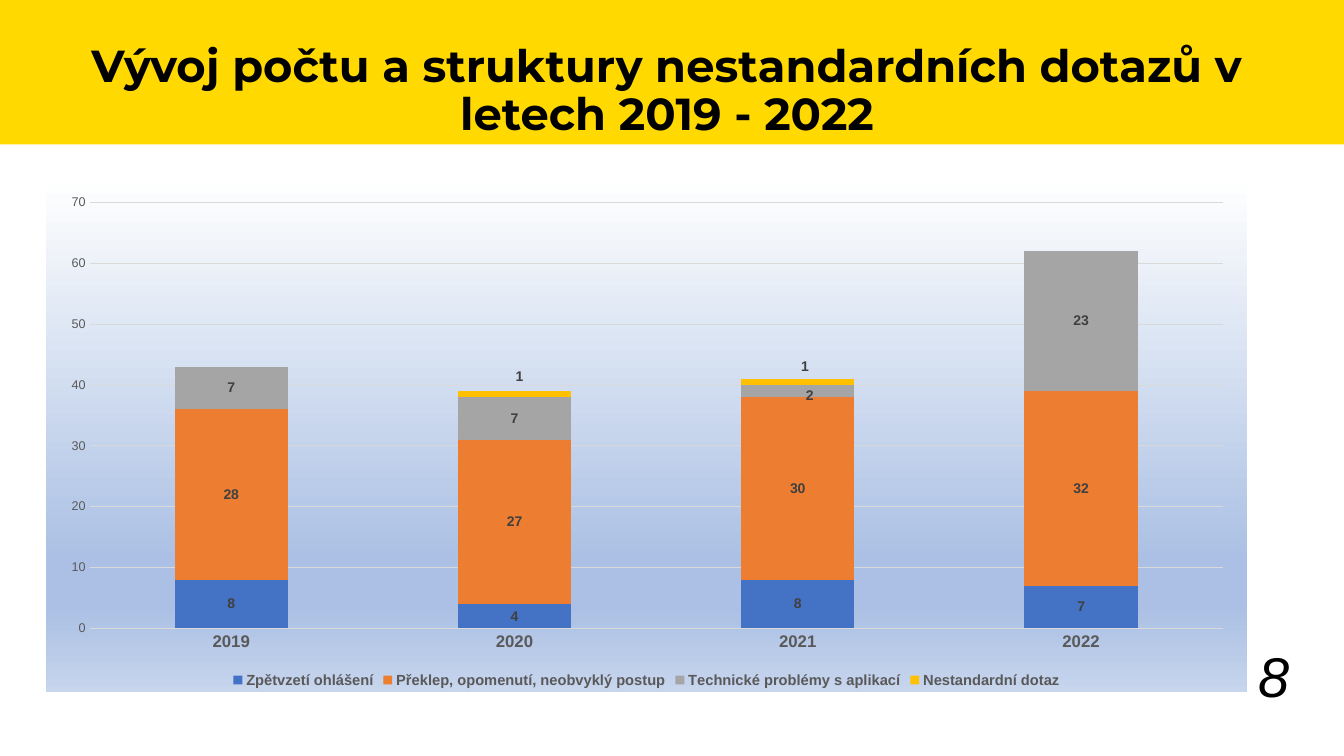
from lxml import etree
from pptx import Presentation
from pptx import util as u
from pptx.chart.data import CategoryChartData
from pptx.dml.color import RGBColor
from pptx.enum import chart as charts, shapes, text
from pptx.oxml import parse_xml
from pptx.oxml.ns import nsdecls

TITLE = "Vývoj počtu a struktury nestandardních dotazů v letech 2019 - 2022"
PAGE_NUMBER = "8"
YEARS = ["2019", "2020", "2021", "2022"]
SERIES = [
    ("Zpětvzetí ohlášení", [8, 4, 8, 7], "4472C4"),
    ("Překlep, opomenutí, neobvyklý postup", [28, 27, 30, 32], "ED7D31"),
    ("Technické problémy s aplikací", [7, 7, 2, 23], "A5A5A5"),
    ("Nestandardní dotaz", [None, 1, 1, None], "FFC000"),
]
# (series, year index): label shift as a share of the chart's width and height
LABEL_SHIFTS = {(2, 2): (0.01, 0.01), (3, 1): (0.004, -0.035), (3, 2): (0.006, -0.03)}
PLOT_AREA = {"x": 0.036, "y": 0.034, "w": 0.944, "h": 0.84}
GRADIENT = [(0, "FDFEFE"), (74, "ABC0E4"), (83, "ABC0E4"), (100, "C7D5ED")]


def color(value):
    return RGBColor.from_string(value)


def style_font(font, size, fill, bold=False, italic=False, name="Arial"):
    font.name, font.size, font.bold, font.italic = name, u.Pt(size), bold, italic
    font.color.rgb = color(fill)


def add_text(slide, content, left, top, width, height, *, align, anchor, spacing=1.0, **style):
    box = slide.shapes.add_textbox(u.Cm(left), u.Cm(top), u.Cm(width), u.Cm(height))
    frame = box.text_frame
    frame.word_wrap = True
    frame.vertical_anchor = anchor
    paragraph = frame.paragraphs[0]
    paragraph.alignment = align
    paragraph.line_spacing = spacing
    run = paragraph.add_run()
    run.text = content
    style_font(run.font, **style)


def manual_layout(modes=(), **values):
    layout = parse_xml(f"<c:layout {nsdecls('c')}><c:manualLayout/></c:layout>")
    namespace = layout.nsmap["c"]
    for tag, value in [*modes, *values.items()]:
        etree.SubElement(layout[0], f"{{{namespace}}}{tag}").set("val", str(value))
    return layout


def fill_chart_background(chart):
    stops = "".join(
        f'<a:gs pos="{position * 1000}"><a:srgbClr val="{value}"/></a:gs>'
        for position, value in GRADIENT
    )
    chart.element.xpath("c:chart")[0].addnext(parse_xml(
        f"<c:spPr {nsdecls('c', 'a')}><a:gradFill><a:gsLst>{stops}</a:gsLst>"
        '<a:lin ang="5400000" scaled="0"/></a:gradFill><a:ln><a:noFill/></a:ln></c:spPr>'
    ))


def set_plot_area(chart):
    area = chart.element.xpath("c:chart/c:plotArea")[0]
    for layout in area.xpath("c:layout"):
        area.remove(layout)
    modes = [("layoutTarget", "inner"), ("xMode", "edge"), ("yMode", "edge")]
    area.insert(0, manual_layout(modes, **PLOT_AREA))


def style_axes(chart):
    for axis, size, bold in ((chart.category_axis, 12, True), (chart.value_axis, 9, False)):
        axis.major_tick_mark = axis.minor_tick_mark = charts.XL_TICK_MARK.NONE
        axis.format.line.fill.background()
        style_font(axis.tick_labels.font, size, "595959", bold)
    values = chart.value_axis
    values.minimum_scale, values.maximum_scale, values.major_unit = 0, 70, 10
    grid = values.major_gridlines.format.line
    grid.color.rgb = color("D9D9D9")
    grid.width = u.Pt(0.75)


def style_series(chart):
    for series, (_, _, fill) in zip(chart.plots[0].series, SERIES):
        series.format.fill.solid()
        series.format.fill.fore_color.rgb = color(fill)
        labels = series.data_labels
        labels.show_value = True
        style_font(labels.font, 10, "404040", bold=True)
    for (index, year), (x, y) in LABEL_SHIFTS.items():
        label = chart.plots[0].series[index].points[year].data_label
        style_font(label.font, 10, "404040", bold=True)
        marker = chart.element.xpath(
            f"//c:ser[c:idx/@val='{index}']/c:dLbls/c:dLbl/c:idx[@val='{year}']")[0]
        marker.addnext(manual_layout(x=x, y=y))


def add_queries_chart(slide):
    data = CategoryChartData()
    data.categories = YEARS
    for name, values, _ in SERIES:
        data.add_series(name, values)
    chart = slide.shapes.add_chart(
        charts.XL_CHART_TYPE.COLUMN_STACKED,
        u.Cm(1.17), u.Cm(4.67), u.Cm(30.25), u.Cm(12.78), data,
    ).chart
    chart.has_title = False
    style_font(chart.font, 10, "000000")
    chart.has_legend = True
    chart.legend.position = charts.XL_LEGEND_POSITION.BOTTOM
    chart.legend.include_in_layout = False
    style_font(chart.legend.font, 10.5, "595959", bold=True)
    plot = chart.plots[0]
    plot.gap_width, plot.overlap, plot.vary_by_categories = 150, 100, False
    style_axes(chart)
    style_series(chart)
    set_plot_area(chart)
    fill_chart_background(chart)


def main():
    presentation = Presentation()
    presentation.slide_width, presentation.slide_height = u.Cm(33.87), u.Cm(19.05)
    slide = presentation.slides.add_slide(presentation.slide_layouts[6])

    band = slide.shapes.add_shape(
        shapes.MSO_SHAPE.RECTANGLE, 0, 0, presentation.slide_width, u.Cm(3.64))
    band.shadow.inherit = False
    band.fill.solid()
    band.fill.fore_color.rgb = color("FFD900")
    band.line.fill.background()

    add_text(slide, PAGE_NUMBER, 25.12, 16.54, 7.62, 1.45, align=text.PP_ALIGN.RIGHT,
             anchor=text.MSO_ANCHOR.BOTTOM, size=40, fill="000000", italic=True)
    add_text(slide, TITLE, 1.17, 1.02, 31.29, 2.59, align=text.PP_ALIGN.CENTER,
             anchor=text.MSO_ANCHOR.MIDDLE, spacing=0.9, size=32, fill="000000",
             bold=True, name="Montserrat")
    add_queries_chart(slide)
    presentation.save("out.pptx")


if __name__ == "__main__":
    main()
